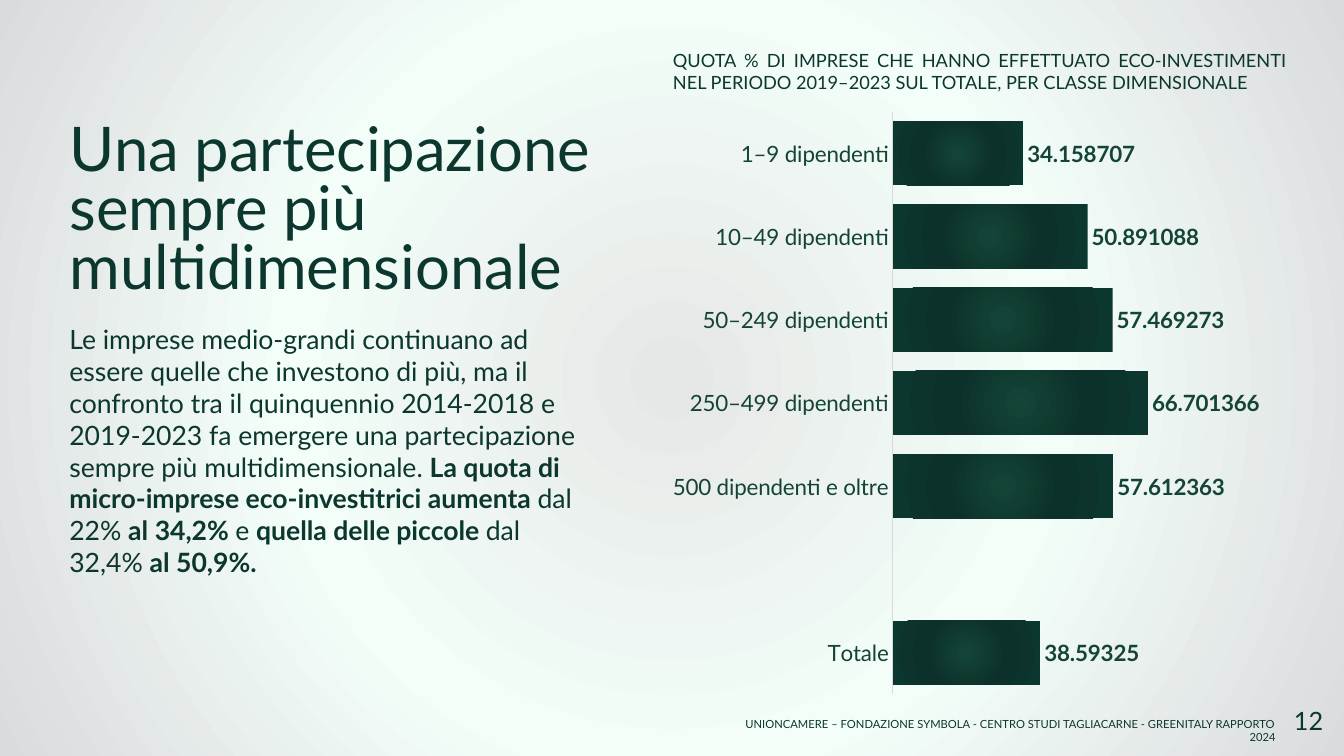
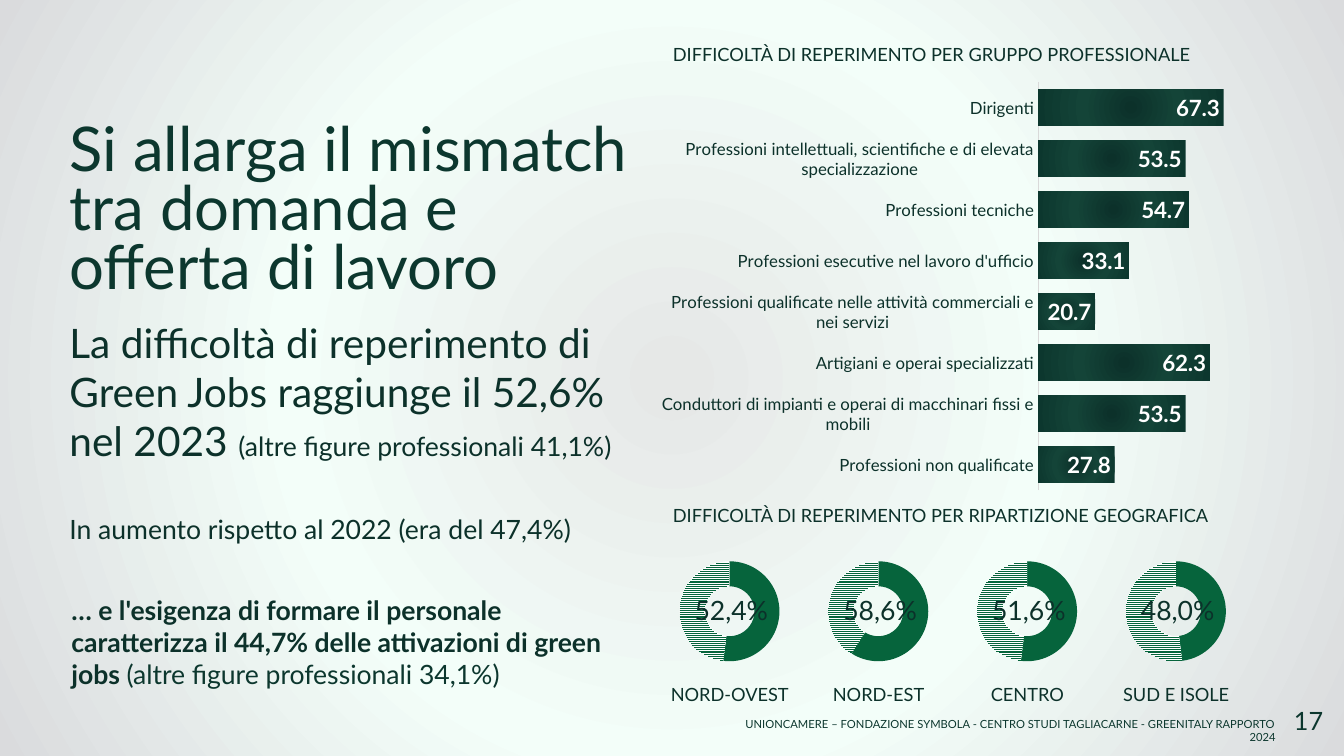
from lxml import etree
from pptx import Presentation
from pptx.chart.data import CategoryChartData
from pptx.dml.color import RGBColor
from pptx.enum.chart import XL_CHART_TYPE as ChartType
from pptx.enum.chart import XL_LABEL_POSITION as LabelPosition
from pptx.enum.chart import XL_TICK_MARK as TickMark
from pptx.enum.dml import MSO_PATTERN as Pattern
from pptx.enum.text import MSO_ANCHOR as Anchor
from pptx.enum.text import MSO_AUTO_SIZE as AutoSize
from pptx.enum.text import PP_ALIGN as Align
from pptx.oxml import parse_xml
from pptx.oxml.ns import nsdecls, qn
from pptx.util import Cm, Pt

FONT = "Lato"
COLORS = {
    "ink": "0C372E", "deep": "0C312A", "pine": "144438", "ring": "06643C",
    "white": "FFFFFF", "axis": "D9D9D9",
    "page_inner": "E6E8E7", "page_middle": "F3FEF9", "page_outer": "DADBDD",
}
FOOTER = ("UNIONCAMERE – FONDAZIONE SYMBOLA - CENTRO STUDI TAGLIACARNE"
          " - GREENITALY RAPPORTO 2024")

# Text runs are (text, size, bold, colour)
INVESTMENT = {
    "number": "12",
    "title": "Una partecipazione sempre più multidimensionale",
    "captions": [
        ("QUOTA % DI IMPRESE CHE HANNO EFFETTUATO ECO-INVESTIMENTI NEL PERIODO "
         "2019–2023 SUL TOTALE, PER CLASSE DIMENSIONALE", 1.25, "ink"),
    ],
    "texts": [
        ((1.5, 8.01, 13.49, 6.76), [
            ("Le imprese medio-grandi continuano ad essere quelle che investono di più, "
             "ma il confronto tra il quinquennio 2014-2018 e 2019-2023 fa emergere una "
             "partecipazione sempre più multidimensionale. ", 19, False, "ink"),
            ("La quota di micro-imprese eco-investitrici aumenta ", 19, True, "ink"),
            ("dal 22% ", 19, False, "ink"),
            ("al 34,2% ", 19, True, "ink"),
            ("e ", 19, False, "ink"),
            ("quella delle piccole ", 19, True, "ink"),
            ("dal 32,4% ", 19, False, "ink"),
            ("al 50,9%.", 19, True, "ink"),
        ]),
    ],
    "bars": {
        "place": (16.94, 2.51, 15.44, 15.29),
        "plot": (0.36, 0.02, 0.5, 0.96),
        "data": [
            ("Totale", 38.59325),
            ("", None),
            ("500 dipendenti e oltre", 57.612363),
            ("250–499 dipendenti", 66.701366),
            ("50–249 dipendenti", 57.469273),
            ("10–49 dipendenti", 50.891088),
            ("1–9 dipendenti", 34.158707),
        ],
        "gap": 30, "axis_text": (16, "pine"), "label_color": "pine",
        "label_position": LabelPosition.OUTSIDE_END, "format": "General",
        "gradient": ("pine", "deep", "ink"),
    },
}
MISMATCH = {
    "number": "17",
    "title": "Si allarga il mismatch tra domanda e offerta di lavoro",
    "captions": [
        ("DIFFICOLTÀ DI REPERIMENTO PER GRUPPO PROFESSIONALE", 1.09, "deep"),
        ("DIFFICOLTÀ DI REPERIMENTO PER RIPARTIZIONE GEOGRAFICA", 12.71, "deep"),
    ],
    "texts": [
        ((1.5, 7.89, 14.66, 3.99), [
            ("La difficoltà di reperimento di Green Jobs raggiunge il 52,6% nel 2023 ",
             29, False, "deep"),
            ("(altre figure professionali 41,1%)", 19, False, "deep"),
        ]),
        ((1.5, 12.79, 14.22, 1.07), [
            ("In aumento rispetto al 2022 (era del 47,4%)", 19, False, "deep"),
        ]),
        ((1.55, 14.84, 14, 2.69), [
            ("… e l'esigenza di formare il personale caratterizza il 44,7% delle "
             "attivazioni di green jobs ", 19, True, "deep"),
            ("(altre figure professionali 34,1%)", 19, False, "ink"),
        ]),
    ],
    "bars": {
        "place": (16.59, 1.85, 15.44, 10.72),
        "plot": (0.62, 0.02, 0.36, 0.96),
        "data": [
            ("Professioni non qualificate", 27.8),
            ("Conduttori di impianti e operai di macchinari fissi e mobili", 53.5),
            ("Artigiani e operai specializzati", 62.3),
            ("Professioni qualificate nelle attività commerciali e nei servizi", 20.7),
            ("Professioni esecutive nel lavoro d'ufficio", 33.1),
            ("Professioni tecniche", 54.7),
            ("Professioni intellettuali, scientifiche e di elevata specializzazione", 53.5),
            ("Dirigenti", 67.3),
        ],
        "gap": 40, "axis_text": (12, "deep"), "label_color": "white",
        "label_position": LabelPosition.INSIDE_END, "format": "0.0",
        "gradient": ("deep", "pine", "ink"),
    },
}
REGIONS = [  # name, label, filled share of the ring
    ("NORD-OVEST", "52,4%", 52),
    ("NORD-EST", "58,6%", 59),
    ("CENTRO", "51,6%", 52),
    ("SUD E ISOLE", "48,0%", 48),
]
FIRST_RING_CENTER, RING_STEP = 18.38, 3.75


def rgb(name):
    return RGBColor.from_string(COLORS[name])


def lengths(place):
    return [Cm(value) for value in place]


def style_font(font, size, color, bold=False):
    font.name, font.size, font.bold = FONT, Pt(size), bold
    font.color.rgb = rgb(color)


def make_radial(solid_fill, names):
    """Replace a solid fill element by a three-stop circular gradient."""
    stops = "".join(
        f'<a:gs pos="{position}"><a:srgbClr val="{COLORS[name]}"/></a:gs>'
        for position, name in zip((1000, 50000, 100000), names))
    gradient = parse_xml(
        f'<a:gradFill {nsdecls("a")} rotWithShape="1"><a:gsLst>{stops}</a:gsLst>'
        '<a:path path="circle"><a:fillToRect l="50000" t="50000" r="50000" b="50000"/>'
        '</a:path></a:gradFill>')
    solid_fill.getparent().replace(solid_fill, gradient)


def write_runs(para, runs):
    for text, size, bold, color in runs:
        span = para.add_run()
        span.text = text
        style_font(span.font, size, color, bold)


def add_text(page, place, runs, align=Align.LEFT, inset=True):
    box = page.shapes.add_textbox(*lengths(place))
    frame = box.text_frame
    frame.word_wrap = True
    if not inset:
        frame.margin_left = frame.margin_right = 0
        frame.margin_top = frame.margin_bottom = 0
    para = frame.paragraphs[0]
    para.alignment = align
    write_runs(para, runs)
    return para


def place_plot(chart, plot):
    """Fix the inner plot area, given as fractions of the chart."""
    area = chart.element.xpath("c:chart/c:plotArea")[0]
    for old in area.findall(qn("c:layout")):
        area.remove(old)
    layout = etree.Element(qn("c:layout"))
    manual = etree.SubElement(layout, qn("c:manualLayout"))
    settings = [("layoutTarget", "inner"), ("xMode", "edge"), ("yMode", "edge"),
                *zip("xywh", plot)]
    for tag, value in settings:
        etree.SubElement(manual, qn(f"c:{tag}")).set("val", str(value))
    area.insert(0, layout)


def add_chart(page, kind, place, plot, data, number_format="General"):
    chart_data = CategoryChartData(number_format=number_format)
    chart_data.categories = [name for name, _ in data]
    chart_data.add_series("Series 1", [value for _, value in data])
    chart = page.shapes.add_chart(kind, *lengths(place), chart_data).chart
    chart.has_title = chart.has_legend = False
    style_font(chart.font, 10, "deep")
    place_plot(chart, plot)
    return chart


def add_bars(page, bars):
    chart = add_chart(page, ChartType.BAR_CLUSTERED, bars["place"], bars["plot"],
                      bars["data"], bars["format"])
    values, names = chart.value_axis, chart.category_axis
    values.visible = values.has_major_gridlines = False
    values.minimum_scale, values.maximum_scale = 0, 80
    names.major_tick_mark = names.minor_tick_mark = TickMark.NONE
    names.format.line.color.rgb = rgb("axis")
    names.format.line.width = Pt(0.75)
    style_font(names.tick_labels.font, *bars["axis_text"])

    bar_plot = chart.plots[0]
    bar_plot.vary_by_categories = False
    bar_plot.gap_width = bars["gap"]
    bar_plot.has_data_labels = True
    labels = bar_plot.data_labels
    labels.show_value = True
    labels.position = bars["label_position"]
    labels.number_format = bars["format"]
    labels.number_format_is_linked = False
    style_font(labels.font, 16, bars["label_color"], True)

    bar_plot.series[0].format.fill.solid()
    make_radial(chart.element.xpath(".//c:ser/c:spPr/a:solidFill")[0], bars["gradient"])


def add_ring(page, center, share):
    chart = add_chart(page, ChartType.DOUGHNUT, (center - 2.42, 13.79, 4.85, 3.23),
                      (0.24, 0.11, 0.52, 0.78), [("1", share), ("2", 100 - share)])
    chart.plots[0].vary_by_categories = False
    chart.element.xpath(".//c:holeSize")[0].set("val", "75")
    points = chart.plots[0].series[0].points
    filled, rest = points[0].format.fill, points[1].format.fill
    filled.solid()
    filled.fore_color.rgb = rgb("ring")
    rest.patterned()
    rest.pattern = Pattern.NARROW_HORIZONTAL
    rest.fore_color.rgb, rest.back_color.rgb = rgb("ring"), rgb("white")


def add_regions(page):
    for index, (name, label, share) in enumerate(REGIONS):
        center = FIRST_RING_CENTER + index * RING_STEP
        add_ring(page, center, share)
        para = add_text(page, (center - 1.32, 14.94, 2.74, 0.97),
                        [(label, 19, False, "deep")], Align.CENTER)
        para.line_spacing = Pt(20)
        add_text(page, (center - 1.54, 17.22, 3.1, 0.58),
                 [(name, 13, False, "deep")], Align.CENTER, inset=False)


def add_page(deck, content):
    """Add a slide with its title, texts, bar chart, footer and number."""
    page = deck.slides.add_slide(deck.slide_layouts[5])
    title = page.shapes.title
    title.left, title.top, title.width, title.height = lengths((1.5, 3.06, 14.76, 4.6))
    frame = title.text_frame
    frame.auto_size = AutoSize.NONE
    frame.word_wrap = True
    frame.vertical_anchor = Anchor.MIDDLE
    para = frame.paragraphs[0]
    para.alignment, para.line_spacing = Align.LEFT, 0.8
    write_runs(para, [(content["title"], 44, False, "ink")])

    for text, top, color in content["captions"]:
        add_text(page, (16.96, top, 15.44, 1.12), [(text, 13, False, color)],
                 Align.JUSTIFY, inset=False)
    for place, runs in content["texts"]:
        add_text(page, place, runs)
    add_bars(page, content["bars"])
    add_text(page, (18.2, 17.95, 14.2, 0.61), [(FOOTER, 8, False, "ink")], Align.RIGHT)
    add_text(page, (32.36, 17.65, 1.47, 1.02), [(content["number"], 18, False, "ink")])
    return page


def main():
    deck = Presentation()
    deck.slide_width, deck.slide_height = Cm(33.87), Cm(19.05)
    master = deck.slide_master
    master.background.fill.solid()
    make_radial(master.element.xpath(".//p:bgPr/a:solidFill")[0],
                ("page_inner", "page_middle", "page_outer"))
    add_page(deck, INVESTMENT)
    add_regions(add_page(deck, MISMATCH))
    deck.save("out.pptx")


if __name__ == "__main__":
    main()
